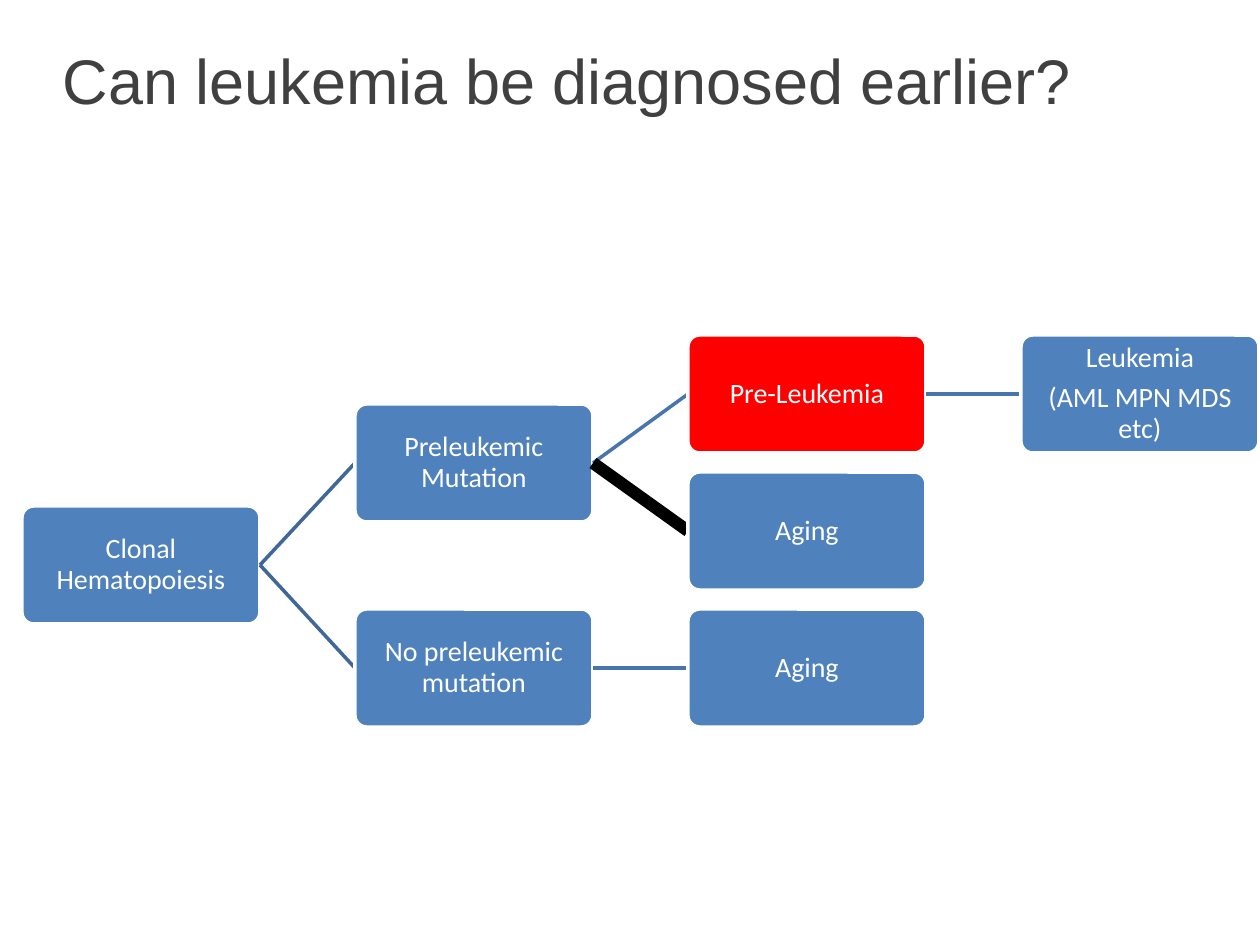
from typing import NamedTuple

from pptx import Presentation
from pptx.dml.color import RGBColor
from pptx.enum.shapes import MSO_CONNECTOR, MSO_SHAPE
from pptx.enum.text import MSO_ANCHOR, PP_ALIGN
from pptx.oxml.ns import qn
from pptx.slide import Slide
from pptx.text.text import TextFrame
from pptx.util import Emu, Pt
from lxml.etree import SubElement

PX_PER_INCH = 126
BOX_WIDTH, BOX_HEIGHT = 238, 118
LEFT, COLUMN_STEP = 22, 333
TOP, ROW_STEP = 335, 137
BLUE, RED, WHITE, BLACK = "4F81BD", "FF0000", "FFFFFF", "000000"
FIRST_LINK, LATER_LINK = "3F6797", "4875AC"


class Stage(NamedTuple):
    """A box of the tree, placed by column and row, with the link from its parent."""

    label: str
    column: int
    row: float
    parent: int | None = None
    link_color: str = LATER_LINK
    link_width: int = 2
    fill: str = BLUE

    @property
    def left(self) -> int:
        return LEFT + self.column * COLUMN_STEP

    @property
    def top(self) -> int:
        return round(TOP + self.row * ROW_STEP)

    @property
    def middle(self) -> int:
        return self.top + BOX_HEIGHT // 2


STAGES = [
    Stage("Clonal Hematopoiesis", 0, 1.25),
    Stage("Preleukemic Mutation", 1, 0.5, 0, FIRST_LINK),
    Stage("Pre-Leukemia", 2, 0, 1, fill=RED),
    Stage("Leukemia\n(AML MPN MDS etc)", 3, 0, 2),
    Stage("Aging", 2, 1, 1, BLACK, 7),
    Stage("No preleukemic mutation", 1, 2, 0, FIRST_LINK),
    Stage("Aging", 2, 2, 5),
]


def px(length: int) -> Emu:
    return Emu(round(length * 914400 / PX_PER_INCH))


def rgb(color: str) -> RGBColor:
    return RGBColor.from_string(color)


def write(frame: TextFrame, text: str, *, font: str, size: int, color: str,
          inset: int, spacing: float = 1.0, after: float = 0) -> None:
    frame.word_wrap = True
    frame.vertical_anchor = MSO_ANCHOR.MIDDLE
    frame.margin_left = frame.margin_right = px(inset)
    frame.margin_top = frame.margin_bottom = px(inset)
    frame.text = text
    for paragraph in frame.paragraphs:
        paragraph.alignment = PP_ALIGN.CENTER
        paragraph.line_spacing = spacing
        paragraph.space_after = Pt(after)
        paragraph.font.name = font
        paragraph.font.size = Pt(size)
        paragraph.font.color.rgb = rgb(color)


def draw_link(slide: Slide, parent: Stage, child: Stage) -> None:
    link = slide.shapes.add_connector(
        MSO_CONNECTOR.STRAIGHT, px(parent.left + BOX_WIDTH), px(parent.middle),
        px(child.left), px(child.middle))
    link.line.color.rgb = rgb(child.link_color)
    link.line.width = Pt(child.link_width)
    SubElement(link._element.spPr, qn("a:effectLst"))


def draw_stage(slide: Slide, stage: Stage) -> None:
    box = slide.shapes.add_shape(
        MSO_SHAPE.ROUNDED_RECTANGLE, px(stage.left), px(stage.top),
        px(BOX_WIDTH), px(BOX_HEIGHT))
    box.adjustments[0] = 0.1
    box.shadow.inherit = False
    box.fill.solid()
    box.fill.fore_color.rgb = rgb(stage.fill)
    box.line.color.rgb = rgb(WHITE)
    box.line.width = Pt(2)
    write(box.text_frame, stage.label, font="Calibri", size=16, color=WHITE,
          inset=1, spacing=0.9, after=5.6)


def main() -> None:
    """Build the slide on how clonal hematopoiesis may lead to leukemia."""
    deck = Presentation()
    deck.slide_width, deck.slide_height = px(1260), px(945)
    slide = deck.slides.add_slide(deck.slide_layouts[6])

    title = slide.shapes.add_textbox(px(0), px(0), px(1134), px(158))
    write(title.text_frame, "Can leukemia be diagnosed earlier?", font="Arial",
          size=36, color="404040", inset=6)

    for stage in STAGES:
        if stage.parent is not None:
            draw_link(slide, STAGES[stage.parent], stage)
        draw_stage(slide, stage)

    deck.save("out.pptx")


if __name__ == "__main__":
    main()
